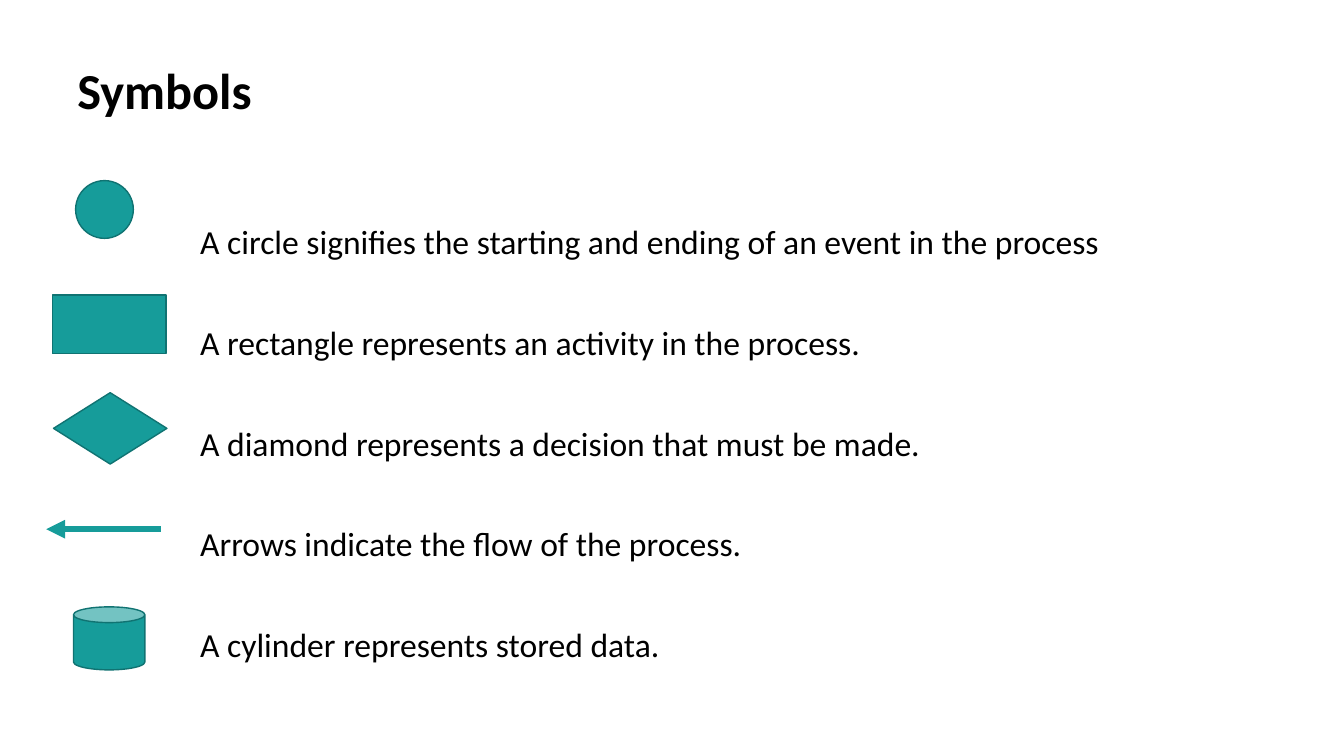
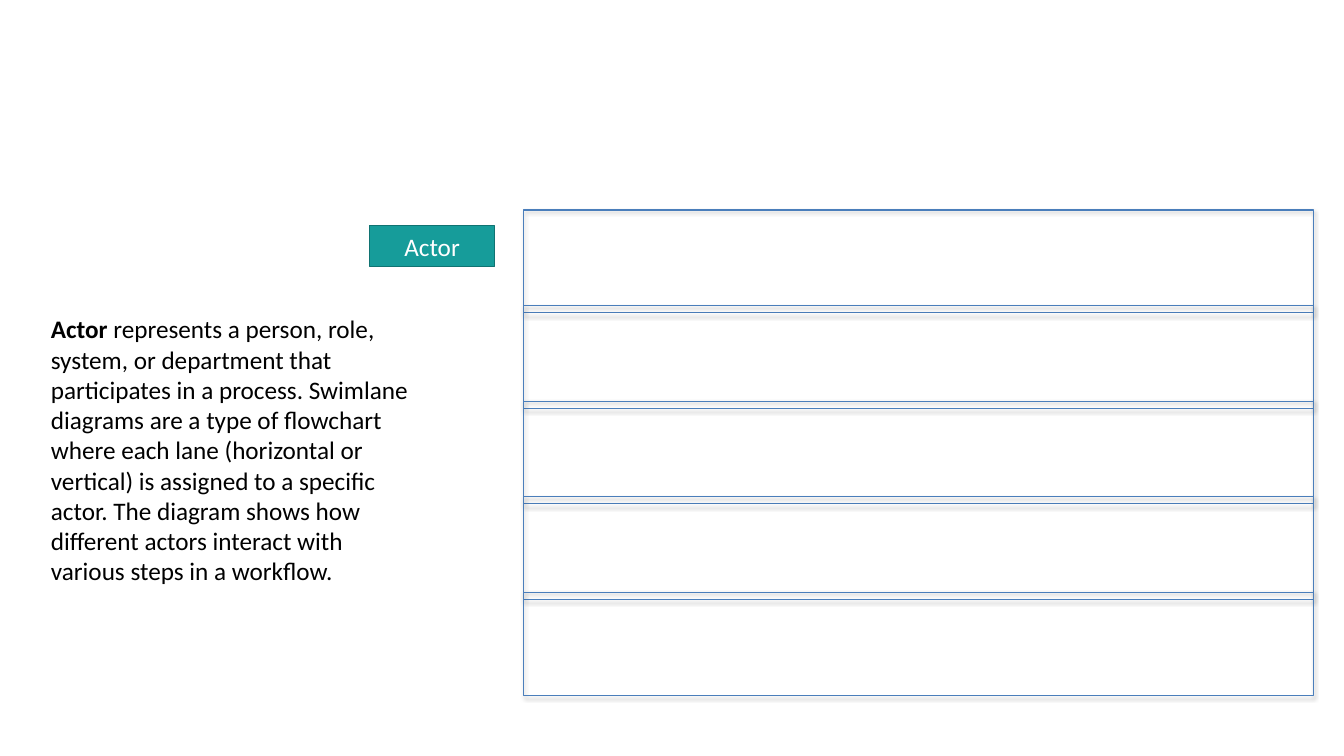
from dataclasses import dataclass

from lxml.etree import SubElement
from pptx import Presentation
from pptx.dml.color import RGBColor
from pptx.enum.shapes import MSO_CONNECTOR, MSO_SHAPE
from pptx.enum.text import MSO_ANCHOR, MSO_AUTO_SIZE, PP_ALIGN
from pptx.oxml.ns import qn
from pptx.util import Pt

PX = 9525  # EMU per px, 96 px to the inch


@dataclass(frozen=True)
class Theme:
    font: str = "Calibri"
    black: RGBColor = RGBColor(0x00, 0x00, 0x00)
    white: RGBColor = RGBColor(0xFF, 0xFF, 0xFF)
    teal: RGBColor = RGBColor(0x16, 0x9C, 0x9A)
    dark_teal: RGBColor = RGBColor(0x10, 0x73, 0x72)
    lane_blue: RGBColor = RGBColor(0x4A, 0x7E, 0xBB)
    title_size: int = 36
    list_size: int = 24
    text_size: int = 18


THEME = Theme()


def write(shape, paragraphs, size=THEME.text_size, color=THEME.black, bold=False,
          align=PP_ALIGN.LEFT, anchor=MSO_ANCHOR.TOP, spacing=1.0):
    """Fill a shape with paragraphs; each is a list of (text, bold) runs or a string."""
    frame = shape.text_frame
    frame.word_wrap = True
    frame.auto_size = MSO_AUTO_SIZE.NONE
    frame.vertical_anchor = anchor
    for index, runs in enumerate(paragraphs):
        paragraph = frame.add_paragraph() if index else frame.paragraphs[0]
        paragraph.alignment = align
        paragraph.line_spacing = spacing
        paragraph.space_before = Pt(0)
        for text, run_bold in [(runs, bold)] if isinstance(runs, str) else runs:
            run = paragraph.add_run()
            run.text = text
            run.font.name = THEME.font
            run.font.size = Pt(size)
            run.font.bold = run_bold
            run.font.color.rgb = color


def add_box(shapes, kind, box, fill=THEME.teal, line=THEME.dark_teal, width=1):
    shape = shapes.add_shape(kind, *(value * PX for value in box))
    shape.shadow.inherit = False
    if fill is None:
        shape.fill.background()
    else:
        shape.fill.solid()
        shape.fill.fore_color.rgb = fill
    shape.line.color.rgb = line
    shape.line.width = Pt(width)
    return shape


presentation = Presentation()
presentation.slide_width = 1280 * PX
presentation.slide_height = 720 * PX

# Slide 1: symbols, with title and list
slide = presentation.slides.add_slide(presentation.slide_layouts[1])
title, body = slide.placeholders
for placeholder, box in ((title, (64, 58, 1118, 119)), (body, (181, 148, 1055, 490))):
    placeholder.left, placeholder.top, placeholder.width, placeholder.height = (
        value * PX for value in box)

write(title, ["Symbols"], size=THEME.title_size, bold=True, spacing=0.9)
write(body, [
    "A circle signifies the starting and ending of an event in the process",
    "A rectangle represents an activity in the process.",
    "A diamond represents a decision that must be made.",
    "Arrows indicate the flow of the process.",
    "A cylinder represents stored data.",
], size=THEME.list_size, spacing=2.5)
for paragraph in body.text_frame.paragraphs:
    properties = paragraph._p.get_or_add_pPr()
    properties.set("marL", "0")
    properties.set("indent", "0")
    SubElement(properties, qn("a:buNone"))

# Flowchart symbols beside the list
for kind, box in (
    (MSO_SHAPE.OVAL, (72, 172, 55, 55)),
    (MSO_SHAPE.RECTANGLE, (50, 281, 108, 56)),
    (MSO_SHAPE.DIAMOND, (51, 374, 108, 68)),
    (MSO_SHAPE.CAN, (70, 578, 68, 60)),
):
    add_box(slide.shapes, kind, box)

arrow = slide.shapes.add_connector(
    MSO_CONNECTOR.STRAIGHT, 153 * PX, 504 * PX, 44 * PX, 504 * PX)
arrow.line.color.rgb = THEME.teal
arrow.line.width = Pt(4.5)
SubElement(arrow.line._get_or_add_ln(), qn("a:tailEnd"), type="triangle")
SubElement(arrow._element.spPr, qn("a:effectLst"))

# Slide 2: swimlanes
slide = presentation.slides.add_slide(presentation.slide_layouts[6])
lanes = slide.shapes.add_group_shape()
LANE_TOP, LANE_PITCH = 200, 91
for index in range(5):
    lane = add_box(lanes.shapes, MSO_SHAPE.RECTANGLE,
                   (499, LANE_TOP + index * LANE_PITCH, 752, 98),
                   fill=None, line=THEME.lane_blue, width=0.75)
    effects = lane._element.spPr.find(qn("a:effectLst"))
    shadow = SubElement(effects, qn("a:outerShdw"), blurRad=str(Pt(3)),
                        dist=str(Pt(1.8)), dir="5400000", rotWithShape="0")
    shadow_color = SubElement(shadow, qn("a:srgbClr"), val=str(THEME.black))
    SubElement(shadow_color, qn("a:alpha"), val="35000")

# Actor label and its explanation
actor = add_box(slide.shapes, MSO_SHAPE.RECTANGLE, (352, 215, 119, 39))
write(actor, ["Actor"], color=THEME.white, align=PP_ALIGN.CENTER, anchor=MSO_ANCHOR.MIDDLE)

explanation = slide.shapes.add_textbox(*(value * PX for value in (39, 294, 365, 300)))
write(explanation, [[
    ("Actor", True),
    (" represents a person, role, system, or department that participates in a process. "
     "Swimlane diagrams are a type of flowchart where each lane (horizontal or vertical) "
     "is assigned to a specific actor. The diagram shows how different actors interact "
     "with various steps in a workflow.", False),
]])

presentation.save("out.pptx")
